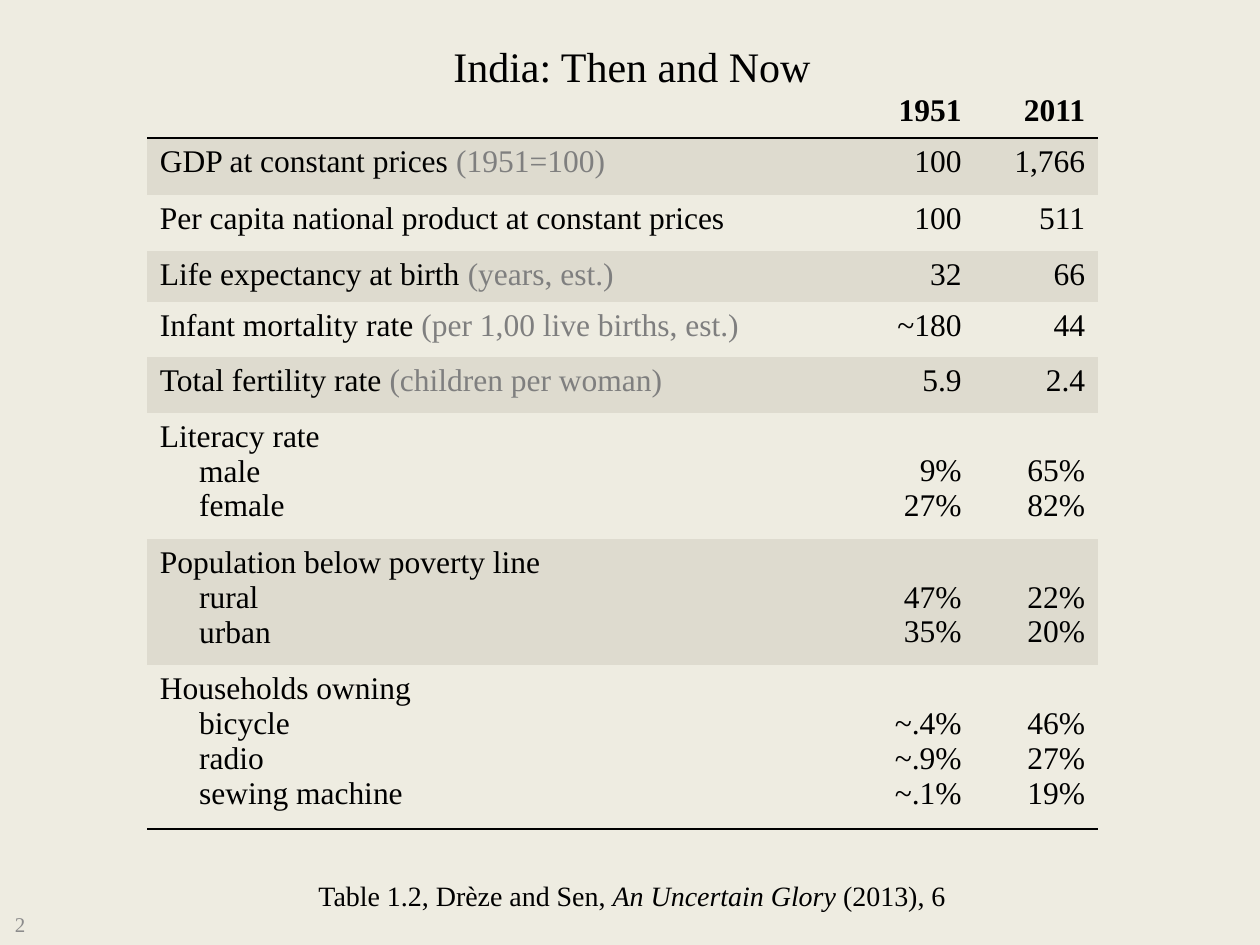
from lxml import etree
from pptx import Presentation
from pptx.dml.color import RGBColor
from pptx.enum.text import MSO_ANCHOR, PP_ALIGN
from pptx.oxml.ns import qn
from pptx.util import Cm, Pt

LEFT, CENTER, RIGHT = PP_ALIGN.LEFT, PP_ALIGN.CENTER, PP_ALIGN.RIGHT
TOP, MIDDLE = MSO_ANCHOR.TOP, MSO_ANCHOR.MIDDLE

COLORS = {"background": "EEECE1", "band": "DEDBCF", "text": "000000",
          "note": "7F7F7F", "number": "8C8C8C"}
FONT = "Times New Roman"
NO_STYLE = "{2D5ABB26-0587-4C30-8999-92F81FD0307C}"
MARGIN_TOP, LINE_HEIGHT, INDENT = 0.13, 0.7, 0.79

COLUMNS = [13.31, 3.36, 2.49]
ROWS = [
    (1.03, [], ["1951"], ["2011"]),
    (1.15, ["GDP at constant prices ", "(1951=100)"], ["100"], ["1,766"]),
    (1.13, ["Per capita national product at constant prices"], ["100"], ["511"]),
    (1.01, ["Life expectancy at birth ", "(years, est.)"], ["32"], ["66"]),
    (1.11, ["Infant mortality rate ", "(per 1,00 live births, est.)"], ["~180"], ["44"]),
    (1.13, ["Total fertility rate ", "(children per woman)"], ["5.9"], ["2.4"]),
    (2.54, ["Literacy rate"], ["9%", "27%"], ["65%", "82%"], ["male", "female"]),
    (2.54, ["Population below poverty line"], ["47%", "35%"], ["22%", "20%"],
     ["rural", "urban"]),
    (3.31, ["Households owning"], ["~.4%", "~.9%", "~.1%"], ["46%", "27%", "19%"],
     ["bicycle", "radio", "sewing machine"]),
]


def add_run(p, text, size=18, color="text", bold=False, italic=False):
    r = p.add_run()
    r.text = text
    r.font.name, r.font.size = FONT, Pt(size)
    r.font.bold, r.font.italic = bold, italic
    r.font.color.rgb = RGBColor.from_string(COLORS[color])


def next_paragraph(tf, align):
    p = tf.paragraphs[0]
    if p.runs:
        p = tf.add_paragraph()
    p.alignment = align
    return p


class SlideBuilder:
    """Holds the style and the current slide."""

    def __init__(self, prs):
        self.s = prs.slides.add_slide(prs.slide_layouts[6])
        fill = self.s.background.fill
        fill.solid()
        fill.fore_color.rgb = RGBColor.from_string(COLORS["background"])

    def text(self, box, runs, align=CENTER, anchor=TOP, margin=0.25, **style):
        tf = self.s.shapes.add_textbox(*map(Cm, box)).text_frame
        tf.word_wrap = True
        tf.vertical_anchor = anchor
        tf.margin_left = tf.margin_right = Cm(margin)
        p = next_paragraph(tf, align)
        for text, extra in runs:
            add_run(p, text, **style, **extra)

    def bottom_border(self, cell, width=1):
        ln = etree.Element(qn("a:lnB"), w=str(Pt(width)))
        fill = etree.SubElement(ln, qn("a:solidFill"))
        etree.SubElement(fill, qn("a:srgbClr"), val=COLORS["text"])
        cell._tc.get_or_add_tcPr().insert(0, ln)

    def label(self, tf, texts, items):
        p = next_paragraph(tf, LEFT)
        for text, color in zip(texts, ("text", "note")):
            add_run(p, text, color=color)
        for item in items:
            p = next_paragraph(tf, LEFT)
            p._p.get_or_add_pPr().set("marL", str(Cm(INDENT)))
            add_run(p, item)

    def table(self, left, top, columns, rows):
        height = sum(row[0] for row in rows)
        frame = self.s.shapes.add_table(len(rows), len(columns), Cm(left), Cm(top),
                                        Cm(sum(columns)), Cm(height))
        table = frame.table
        table.first_row = table.horz_banding = False
        table._tbl.tblPr.find(qn("a:tableStyleId")).text = NO_STYLE
        for column, width in zip(table.columns, columns):
            column.width = Cm(width)
        for i, (height, texts, then, now, *items) in enumerate(rows):
            table.rows[i].height = Cm(height)
            cells = [table.cell(i, j) for j in range(len(columns))]
            for cell in cells:
                cell.margin_top = Cm(MARGIN_TOP)
                if i % 2:
                    cell.fill.solid()
                    cell.fill.fore_color.rgb = RGBColor.from_string(COLORS["band"])
                else:
                    cell.fill.background()
                if i in (0, len(rows) - 1):
                    self.bottom_border(cell)
            self.label(cells[0].text_frame, texts, items[0] if items else [])
            for cell, values in zip(cells[1:], (then, now)):
                if items:
                    cell.margin_top = Cm(MARGIN_TOP + LINE_HEIGHT)
                for value in values:
                    add_run(next_paragraph(cell.text_frame, RIGHT), value, bold=i == 0)


def main():
    prs = Presentation()
    prs.slide_width, prs.slide_height = Cm(25.4), Cm(19.05)
    slide = SlideBuilder(prs)
    slide.text((0.05, 18.21, 0.56, 0.84), [("2", {})], align=RIGHT, anchor=MIDDLE,
               margin=0.1, size=12, color="number")
    slide.text((0.6, 0.69, 24.28, 1.28), [("India: Then and Now", {})], size=24)
    slide.table(2.97, 1.75, COLUMNS, ROWS)
    slide.text((0.6, 17.58, 24.28, 0.94),
               [("Table 1.2, Drèze and Sen, ", {}),
                ("An Uncertain Glory ", {"italic": True}),
                ("(2013), 6", {})], size=16)
    prs.save("out.pptx")


if __name__ == "__main__":
    main()
